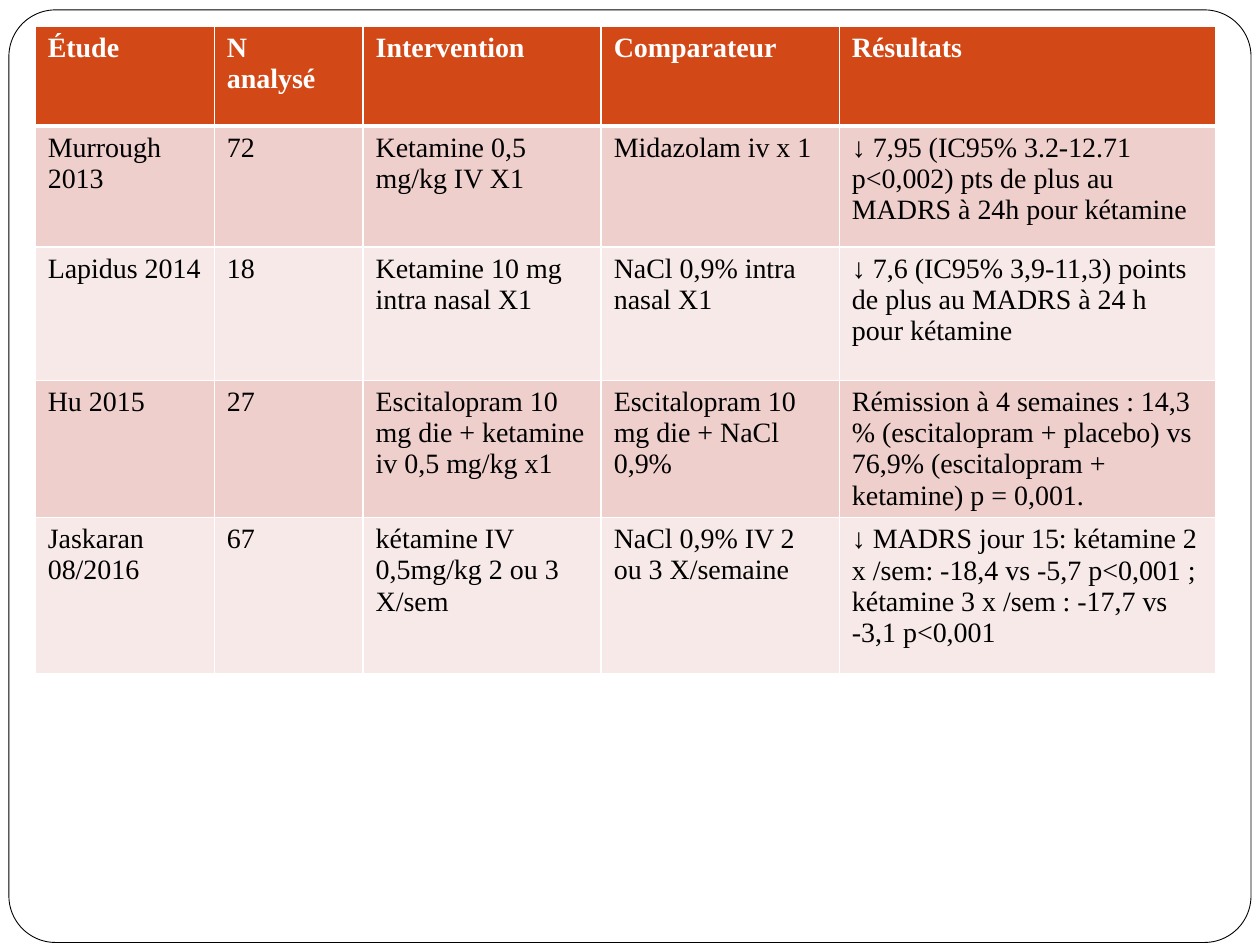
import lxml.etree
import pptx
import pptx.dml.color
import pptx.enum.shapes
import pptx.oxml.ns
import pptx.util

Cm = pptx.util.Cm
Pt = pptx.util.Pt
RGB = pptx.dml.color.RGBColor

WHITE = RGB(0xFF, 0xFF, 0xFF)
BLACK = RGB(0x00, 0x00, 0x00)
RUST = RGB(0xD3, 0x48, 0x17)
ROSE = RGB(0xEF, 0xCF, 0xCC)
BLUSH = RGB(0xF7, 0xE9, 0xE8)

WIDTHS = [3.61, 3.0, 4.8, 4.8, 7.59]
HEIGHTS = [2.01, 2.44, 2.69, 1.83, 3.15]
ROWS = [
    ["Étude", "N\nanalysé", "Intervention", "Comparateur", "Résultats"],
    ["Murrough 2013", "72", "Ketamine 0,5 mg/kg IV X1", "Midazolam iv x 1",
     "↓ 7,95 (IC95% 3.2-12.71 p<0,002) pts de plus au MADRS à 24h pour kétamine"],
    ["Lapidus 2014", "18", "Ketamine 10 mg intra nasal X1", "NaCl 0,9% intra nasal X1",
     "↓ 7,6 (IC95% 3,9-11,3) points de plus au MADRS à 24 h pour kétamine"],
    ["Hu 2015", "27", "Escitalopram 10 mg die + ketamine iv 0,5 mg/kg x1",
     "Escitalopram 10 mg die + NaCl 0,9%",
     "Rémission à 4 semaines : 14,3 % (escitalopram + placebo) vs 76,9% "
     "(escitalopram + ketamine) p = 0,001."],
    ["Jaskaran 08/2016", "67", "kétamine IV 0,5mg/kg 2 ou 3 X/sem",
     "NaCl 0,9% IV 2 ou 3 X/semaine",
     "↓ MADRS jour 15: kétamine 2 x /sem: -18,4 vs -5,7 p<0,001 ; "
     "kétamine 3 x /sem : -17,7 vs -3,1 p<0,001"],
]


class Deck:
    font = "Times New Roman"
    sign = "Arial"
    size = Pt(16)

    def __init__(self, slide):
        self.slide = slide

    def frame(self, left, top, width, height):
        kind = pptx.enum.shapes.MSO_SHAPE.ROUNDED_RECTANGLE
        shape = self.slide.shapes.add_shape(kind, Cm(left), Cm(top), Cm(width), Cm(height))
        shape.adjustments[0] = 0.05
        shape.shadow.inherit = False
        shape.fill.solid()
        shape.fill.fore_color.rgb = WHITE
        shape.line.color.rgb = BLACK
        shape.line.width = Pt(0.5)

    def run(self, para, text, font, color, bold):
        run = para.add_run()
        run.text = text
        run.font.name = font
        run.font.size = self.size
        run.font.bold = bold
        run.font.color.rgb = color

    def label(self, cell, text, color, bold):
        for num, line in enumerate(text.split("\n")):
            body = cell.text_frame
            para = body.add_paragraph() if num else body.paragraphs[0]
            if line.startswith("↓"):
                self.run(para, "↓", self.sign, color, bold)
                line = line[1:]
            self.run(para, line, self.font, color, bold)

    def edge(self, cell, sides):
        qn = pptx.oxml.ns.qn
        props = cell._tc.get_or_add_tcPr()
        for num, (side, width) in enumerate(sides.items()):
            line = lxml.etree.Element(qn("a:ln" + side), w=str(Pt(width)))
            fill = lxml.etree.SubElement(line, qn("a:solidFill"))
            lxml.etree.SubElement(fill, qn("a:srgbClr"), val=str(WHITE))
            props.insert(num, line)

    def table(self, left, top, height, widths, heights, rows):
        frame = self.slide.shapes.add_table(
            len(rows), len(widths), Cm(left), Cm(top), Cm(sum(widths)), Cm(height))
        grid = frame.table
        for col, width in zip(grid.columns, widths):
            col.width = Cm(width)
        for num, (row, tall) in enumerate(zip(grid.rows, heights)):
            row.height = Cm(tall)
            head = num == 0
            fill = RUST if head else (ROSE if num % 2 else BLUSH)
            sides = {"L": 1, "R": 1, "T": 3 if num == 1 else 1, "B": 3 if head else 1}
            for cell, text in zip(row.cells, rows[num]):
                cell.fill.solid()
                cell.fill.fore_color.rgb = fill
                self.edge(cell, sides)
                self.label(cell, text, WHITE if head else BLACK, head)
        frame.height = Cm(height)


def main():
    show = pptx.Presentation()
    show.slide_width = Cm(25.4)
    show.slide_height = Cm(19.05)
    deck = Deck(show.slides.add_slide(show.slide_layouts[6]))
    deck.frame(0.18, 0.2, 25.04, 18.8)
    deck.table(0.71, 0.53, 14.94, WIDTHS, HEIGHTS, ROWS)
    show.save("out.pptx")


if __name__ == "__main__":
    main()
